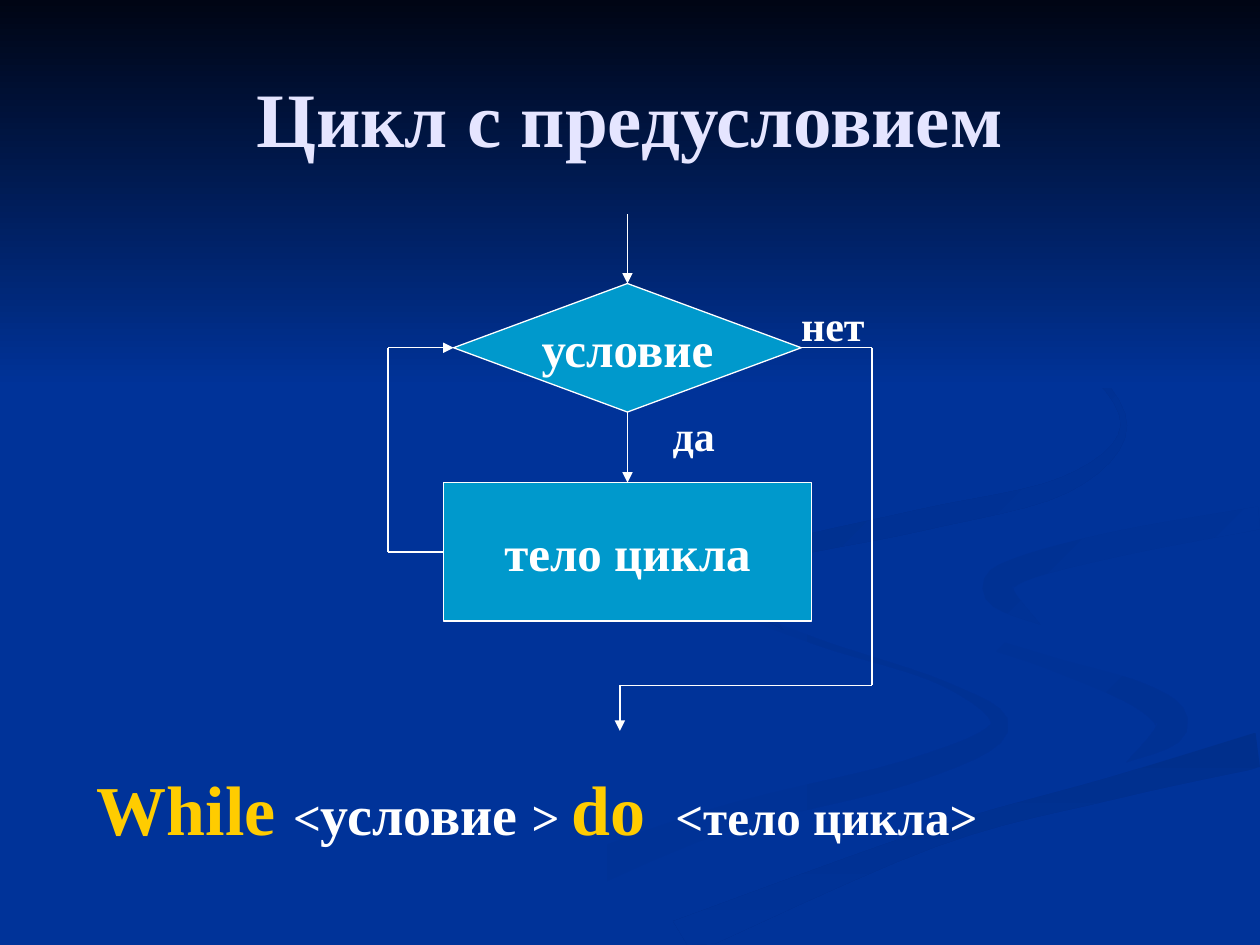
import math
from dataclasses import dataclass

from lxml import etree
from pptx import Presentation
from pptx import util as u
from pptx.dml.color import RGBColor
from pptx.enum import shapes, text
from pptx.oxml import ns

Inches = u.Inches
SLIDE_W, SLIDE_H = 10, 7.5
CURVE_STEPS = 6


@dataclass(frozen=True)
class Theme:
    """Colours, type sizes and line width of the slide."""
    font: str = "Times New Roman"
    ground: str = "003399"
    shade: str = "003193"
    deep_shade: str = "002F8C"
    night: str = "000514"
    title: str = "E5E5FF"
    ink: str = "FFFFFF"
    block: str = "0099CC"
    keyword: str = "FFCC00"
    title_size: int = 44
    keyword_size: int = 40
    term_size: int = 32
    block_size: int = 28
    label_size: int = 24
    line_width: float = 0.75


THEME = Theme()


@dataclass(frozen=True)
class Ribbon:
    """A band swept along a spine of (x, y, thickness) knots, with its gradient."""
    first: str
    last: str
    angle: int
    spine: tuple


RIBBONS = (
    Ribbon(THEME.ground, THEME.shade, 0, (
        (5.75, 4.6, 0), (5.83, 4.82, 0.06), (6.5, 5.1, 0.05), (7.5, 5.43, 0.04),
        (7.93, 5.78, 0.15), (7.2, 6.13, 0.19), (5.5, 6.58, 0.22), (3.3, 7.5, 0.4))),
    Ribbon(THEME.ground, THEME.shade, 45, (
        (7.24, 4.64, 0), (7.5, 4.97, 0.08), (8.3, 5.25, 0.1), (9.05, 5.52, 0.2),
        (9.3, 5.77, 0.25), (8.94, 6.05, 0))),
    Ribbon(THEME.deep_shade, THEME.ground, 90, (
        (10, 5.95, 0.28), (8.85, 6.25, 0.18), (7.4, 6.65, 0.15), (5.4, 7.45, 0.3))),
    Ribbon(THEME.shade, THEME.ground, 45, (
        (10, 4.11, 0.18), (8.9, 4.31, 0.2), (8.1, 4.52, 0.2), (7.93, 4.7, 0.24),
        (8.26, 4.96, 0))),
    Ribbon(THEME.deep_shade, THEME.ground, 45, (
        (7.62, 2.33, 0), (8.5, 2.8, 0.05), (8.92, 3.38, 0.05), (8.45, 3.85, 0.13),
        (7.3, 4.13, 0.17), (6.1, 4.4, 0.14), (5.85, 4.66, 0.16), (6.22, 5, 0))),
)


def rgb(code):
    """Turn a hex code into a colour."""
    return RGBColor.from_string(code)


def style_font(font, size, colour):
    """Set the common bold face with a size and a colour."""
    font.name, font.size, font.bold = THEME.font, u.Pt(size), True
    font.color.rgb = rgb(colour)


def smooth_spine(knots):
    """Sample a Catmull-Rom curve through the knots."""
    padded = (knots[0], *knots, knots[-1])
    samples = []
    for a, b, c, d in zip(padded, padded[1:], padded[2:], padded[3:]):
        for step in range(CURVE_STEPS):
            t = step / CURVE_STEPS
            samples.append(tuple(
                q + t * (r - p) / 2 + t ** 2 * (p - 2.5 * q + 2 * r - s / 2)
                + t ** 3 * (1.5 * (q - r) + (s - p) / 2)
                for p, q, r, s in zip(a, b, c, d)))
    return samples + [knots[-1]]


def ribbon_outline(knots):
    """Offset the spine by half its thickness to each side, kept on the slide."""
    samples = smooth_spine(knots)
    near_edge, far_edge = [], []
    for i, (x, y, thickness) in enumerate(samples):
        before, after = samples[max(i - 1, 0)], samples[min(i + 1, len(samples) - 1)]
        heading = math.atan2(after[1] - before[1], after[0] - before[0])
        for edge, half in ((near_edge, thickness / 2), (far_edge, -thickness / 2)):
            edge.append((min(x - half * math.sin(heading), SLIDE_W),
                         min(y + half * math.cos(heading), SLIDE_H)))
    return near_edge + far_edge[::-1]


def paint(part, first, last, angle):
    """Fill a backdrop part with a clockwise-angled gradient and no line."""
    part.shadow.inherit = False
    part.line.fill.background()
    part.fill.gradient()
    part.fill.gradient_angle = -angle % 360
    for stop, position, colour in zip(part.fill.gradient_stops, (0, 1), (first, last)):
        stop.position = position
        stop.color.rgb = rgb(colour)


def draw_backdrop(slide, left, top, width, height):
    """Paint the ground, the ribbons and the dark upper band in its box."""
    slide.background.fill.solid()
    slide.background.fill.fore_color.rgb = rgb(THEME.ground)
    for ribbon in RIBBONS:
        outline = [(Inches(x), Inches(y)) for x, y in ribbon_outline(ribbon.spine)]
        builder = slide.shapes.build_freeform(*outline[0])
        builder.add_line_segments(outline[1:], close=True)
        paint(builder.convert_to_shape(), ribbon.first, ribbon.last, ribbon.angle)
    sky = slide.shapes.add_shape(
        shapes.MSO_SHAPE.RECTANGLE, *map(Inches, (left, top, width, height)))
    paint(sky, THEME.night, THEME.ground, 90)


def place_title(slide, left, top, width, height):
    """Move the title into its box, in front of the backdrop."""
    title = slide.shapes.title
    title.left, title.top, title.width, title.height = map(Inches, (left, top, width, height))
    frame = title.text_frame
    frame.text = "Цикл с предусловием"
    frame.vertical_anchor = text.MSO_ANCHOR.MIDDLE
    frame.paragraphs[0].alignment = text.PP_ALIGN.CENTER
    style_font(frame.paragraphs[0].font, THEME.title_size, THEME.title)
    slide.shapes._spTree.append(title._element)


def add_block(slide, kind, caption, left, top, width, height):
    """Add a captioned flowchart block."""
    block = slide.shapes.add_shape(kind, *map(Inches, (left, top, width, height)))
    block.shadow.inherit = False
    block.fill.solid()
    block.fill.fore_color.rgb = rgb(THEME.block)
    block.line.color.rgb = rgb(THEME.ink)
    block.line.width = u.Pt(THEME.line_width)
    frame = block.text_frame
    frame.text, frame.word_wrap = caption, False
    frame.vertical_anchor = text.MSO_ANCHOR.MIDDLE
    frame.paragraphs[0].alignment = text.PP_ALIGN.CENTER
    style_font(frame.paragraphs[0].font, THEME.block_size, THEME.ink)
    return block


def add_flow(slide, points, source=None, target=None):
    """Draw an arrow in straight legs, joined to (block, side) pairs."""
    legs = []
    for start, end in zip(points, points[1:]):
        leg = slide.shapes.add_connector(
            shapes.MSO_CONNECTOR.STRAIGHT, *map(Inches, start + end))
        leg.line.color.rgb = rgb(THEME.ink)
        leg.line.width = u.Pt(THEME.line_width)
        etree.SubElement(leg._element.spPr, ns.qn("a:effectLst"))
        legs.append(leg)
    if source:
        legs[0].begin_connect(*source)
    if target:
        legs[-1].end_connect(*target)
    etree.SubElement(legs[-1].line._get_or_add_ln(), ns.qn("a:tailEnd"), type="triangle")


def add_text(slide, pieces, left, top, width, height):
    """Add a one-line text box from (words, size, colour) pieces."""
    box = slide.shapes.add_textbox(*map(Inches, (left, top, width, height)))
    box.text_frame.word_wrap = True
    for words, size, colour in pieces:
        run = box.text_frame.paragraphs[0].add_run()
        run.text = words
        style_font(run.font, size, colour)


def draw_flowchart(slide, left, top, width, height):
    """Draw the pre-condition loop inside its box."""
    centre, right, bottom = left + 1.9, left + width, top + height
    test_top, test_w, test_h = top + 0.55, 2.76, 1.02
    body_top, body_w, body_h = top + 2.13, 2.92, 1.1
    test_mid, body_mid = test_top + test_h / 2, body_top + body_h / 2
    test_left, body_left = centre - test_w / 2, centre - body_w / 2
    exit_x, exit_y = centre - 0.06, bottom - 0.36

    condition = add_block(slide, shapes.MSO_SHAPE.DIAMOND, "условие",
                          test_left, test_top, test_w, test_h)
    body = add_block(slide, shapes.MSO_SHAPE.RECTANGLE, "тело цикла",
                     body_left, body_top, body_w, body_h)
    add_flow(slide, [(centre, top), (centre, test_top)], target=(condition, 0))
    add_flow(slide, [(centre, test_top + test_h), (centre, body_top)],
             source=(condition, 2), target=(body, 0))
    add_flow(slide, [(body_left, body_mid), (left, body_mid), (left, test_mid),
                     (test_left, test_mid)], source=(body, 1), target=(condition, 1))
    add_flow(slide, [(test_left + test_w, test_mid), (right, test_mid), (right, exit_y),
                     (exit_x, exit_y), (exit_x, bottom)], source=(condition, 3))
    for answer, x, y, w in (("да", left + 2.16, top + 1.5, 0.55),
                            ("нет", left + 3.18, top + 0.63, 0.87)):
        add_text(slide, [(answer, THEME.label_size, THEME.ink)], x, y, w, 0.5)


def write_syntax(slide, left, top, width, height):
    """Write the statement form of the loop."""
    add_text(slide, [
        ("While ", THEME.keyword_size, THEME.keyword),
        ("<", THEME.block_size, THEME.ink),
        ("условие ", THEME.term_size, THEME.ink),
        ("> ", THEME.block_size, THEME.ink),
        ("do ", THEME.keyword_size, THEME.keyword),
        (" <тело цикла>", THEME.block_size, THEME.ink),
    ], left, top, width, height)


def main():
    """Build and save the slide."""
    deck = Presentation()
    deck.slide_width, deck.slide_height = Inches(SLIDE_W), Inches(SLIDE_H)
    slide = deck.slides.add_slide(deck.slide_layouts[5])
    draw_backdrop(slide, 0, 0, SLIDE_W, 3.08)
    place_title(slide, 0.5, 0.3, 9, 1.25)
    draw_flowchart(slide, 3.08, 1.7, 3.84, 4.1)
    write_syntax(slide, 0.67, 6.03, 9.65, 0.77)
    deck.save("out.pptx")


if __name__ == "__main__":
    main()
